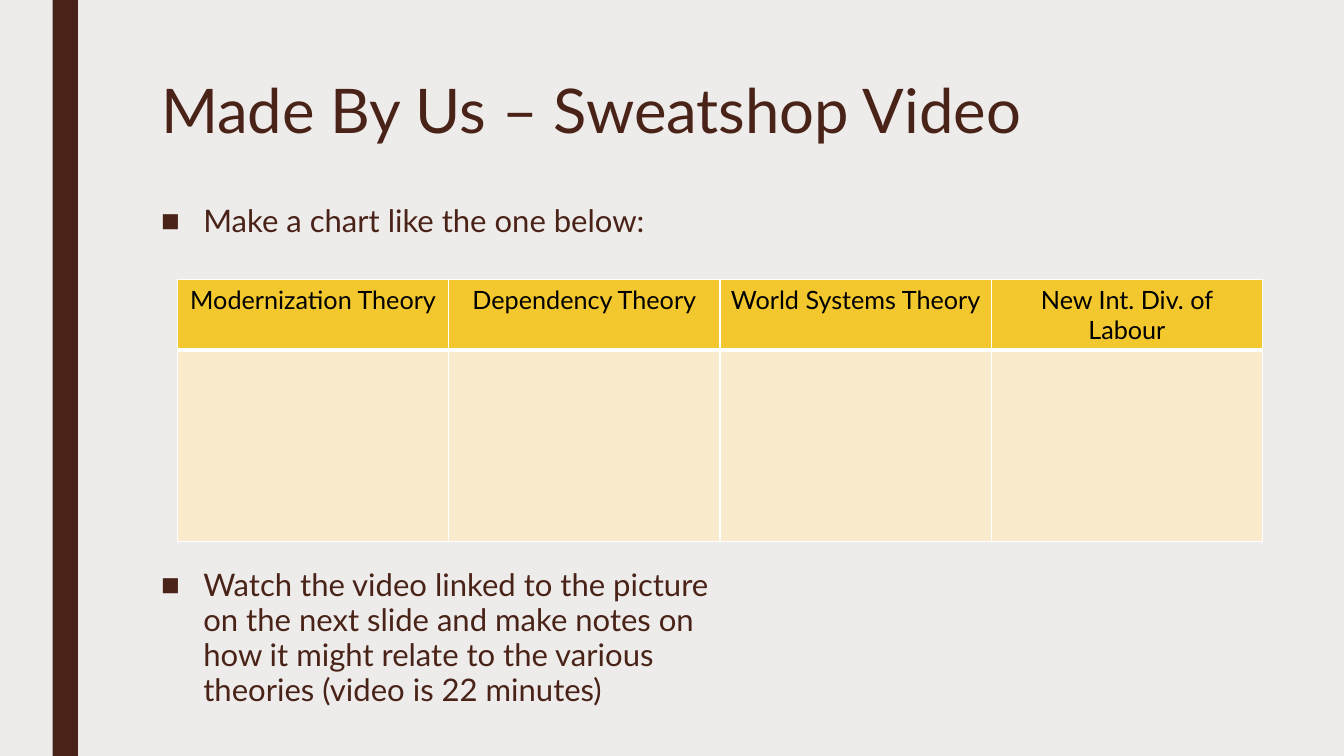
from lxml.etree import SubElement
from pptx import Presentation
from pptx.dml.color import RGBColor
from pptx.enum.shapes import MSO_SHAPE as Preset
from pptx.enum.text import MSO_ANCHOR as Anchor, PP_ALIGN as Align
from pptx.oxml.ns import qn
from pptx.util import Pt

BROWN = RGBColor(0x4A, 0x23, 0x18)
GREY = RGBColor(0xED, 0xEC, 0xEB)
GOLD = RGBColor(0xF3, 0xC8, 0x2E)
CREAM = RGBColor(0xFA, 0xEB, 0xCD)
WHITE = RGBColor(0xFF, 0xFF, 0xFF)
BLACK = RGBColor(0, 0, 0)

THEORIES = ["Modernization Theory", "Dependency Theory",
            "World Systems Theory", "New Int. Div. of Labour"]
TASKS = [
    ("Make a chart like the one below:", 0),
    ("Watch the video linked to the picture on the next slide and make notes "
     "on how it might relate to the various theories (video is 22 minutes)", 235),
]


def write(paragraph, text, size, color, **layout):
    run = paragraph.add_run()
    run.text = text
    run.font.color.rgb = color
    for name, value in dict(name="Lato", size=Pt(size), bold=False).items():
        setattr(run.font, name, value)
    for name, value in layout.items():
        setattr(paragraph, name, value)


def add_text_frame(slide, left, top, width, height):
    frame = slide.shapes.add_textbox(Pt(left), Pt(top), Pt(width), Pt(height)).text_frame
    frame.word_wrap = True
    frame.vertical_anchor = Anchor.TOP
    return frame


def add_side_bar(slide):
    bar = slide.shapes.add_shape(Preset.RECTANGLE, Pt(37.6), Pt(0), Pt(18), Pt(540))
    bar.shadow.inherit = False
    bar.fill.solid()
    bar.fill.fore_color.rgb = BROWN
    bar.line.fill.background()


def set_bullet(paragraph, indent):
    props = paragraph._p.get_or_add_pPr()
    props.set("marL", str(Pt(indent)))
    props.set("indent", str(-Pt(indent)))
    SubElement(props, qn("a:buFont"), typeface="Arial")
    SubElement(props, qn("a:buChar"), char="■")


def add_tasks(slide):
    frame = add_text_frame(slide, 108, 142.6, 413.3, 373.7)
    for index, (task, gap) in enumerate(TASKS):
        paragraph = frame.add_paragraph() if index else frame.paragraphs[0]
        write(paragraph, task, 22.2, BROWN, line_spacing=0.94, space_before=Pt(gap))
        set_bullet(paragraph, 30.2)


def style_cell(cell, color, borders):
    # Borders come before the fill in the cell properties
    props = cell._tc.get_or_add_tcPr()
    for side, width in borders.items():
        line = SubElement(props, qn(f"a:{side}"), w=str(Pt(width)))
        fill = SubElement(line, qn("a:solidFill"))
        SubElement(fill, qn("a:srgbClr"), val=str(WHITE))
    cell.fill.solid()
    cell.fill.fore_color.rgb = color


def add_theory_table(slide):
    table = slide.shapes.add_table(2, len(THEORIES), Pt(126.8), Pt(199.4),
                                   Pt(775), Pt(187)).table
    table.horz_banding = False
    for row, height in zip(table.rows, (50, 137)):
        row.height = Pt(height)
    for column, theory in enumerate(THEORIES):
        header, notes = table.cell(0, column), table.cell(1, column)
        write(header.text_frame.paragraphs[0], theory, 18, BLACK, alignment=Align.CENTER)
        style_cell(header, GOLD, dict(lnL=1, lnR=1, lnT=1, lnB=3))
        style_cell(notes, CREAM, dict(lnL=1, lnR=1, lnT=3, lnB=1))


def main():
    deck = Presentation()
    deck.slide_width, deck.slide_height = Pt(960), Pt(540)
    slide = deck.slides.add_slide(deck.slide_layouts[6])
    slide.background.fill.solid()
    slide.background.fill.fore_color.rgb = GREY

    add_side_bar(slide)
    # Title
    title = add_text_frame(slide, 108, 54, 756, 62)
    write(title.paragraphs[0], "Made By Us – Sweatshop Video", 44, BROWN, line_spacing=0.89)
    # Instructions around the table
    add_tasks(slide)
    add_theory_table(slide)
    deck.save("out.pptx")


if __name__ == "__main__":
    main()
